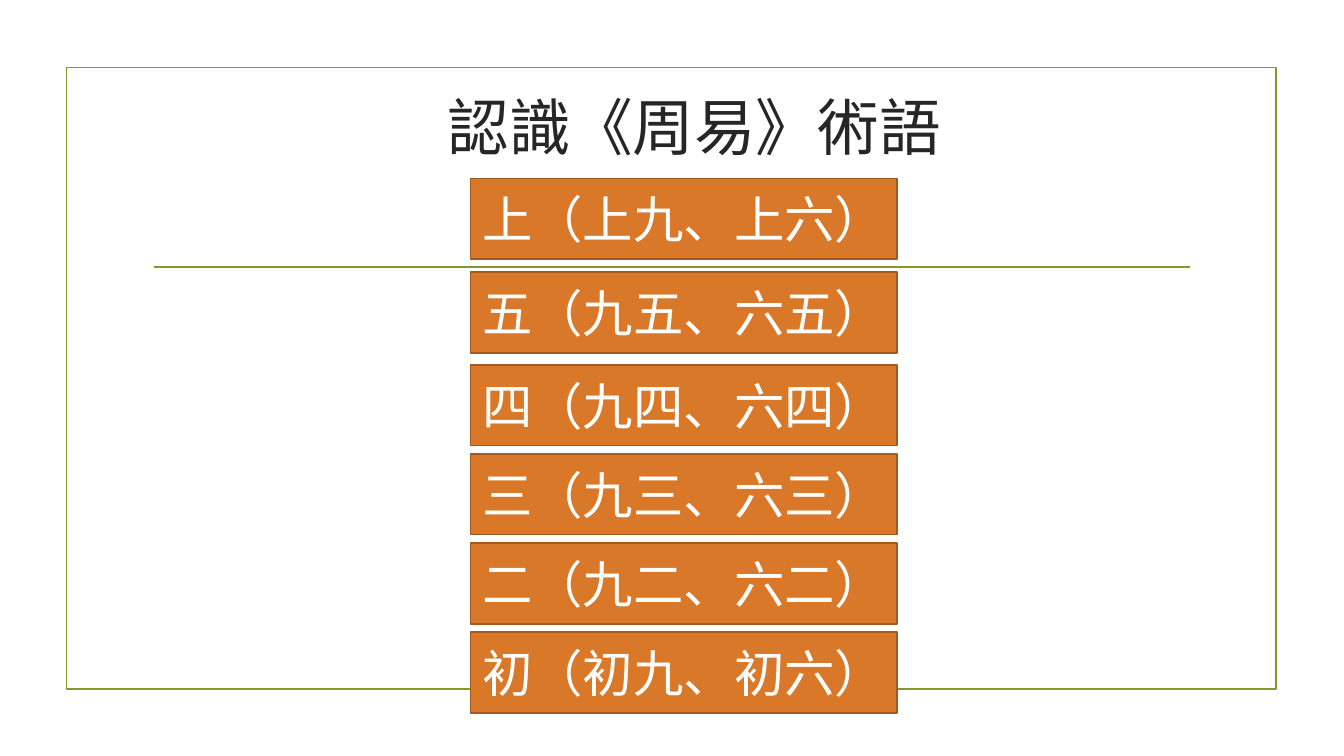
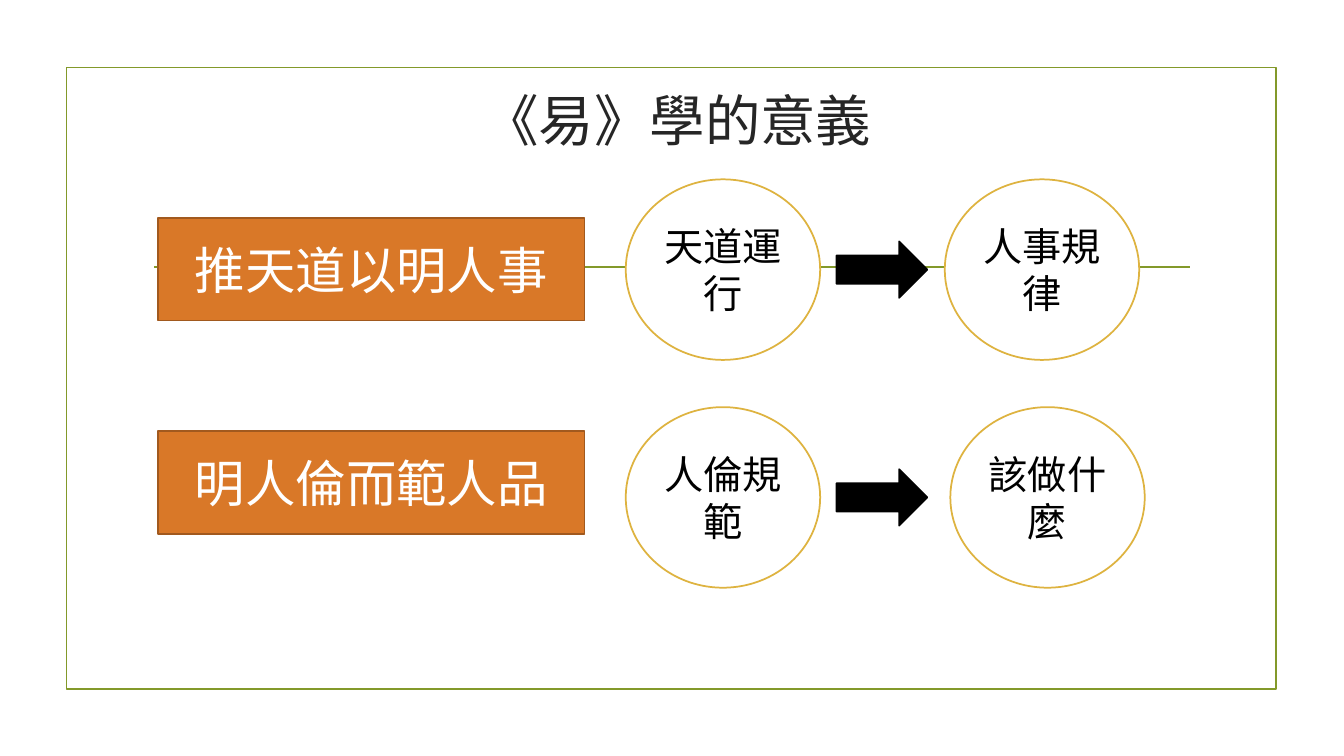
from dataclasses import dataclass
from typing import NamedTuple

from lxml.etree import SubElement
from pptx import Presentation
from pptx.dml.color import RGBColor as Rgb
from pptx.enum.shapes import MSO_CONNECTOR as Link, MSO_SHAPE as Kind
from pptx.enum.text import MSO_ANCHOR as Anchor, PP_ALIGN as Align
from pptx.oxml.ns import qn
from pptx.slide import Slide
from pptx.text.text import TextFrame
from pptx.util import Cm, Pt

FONT = "Noto Sans CJK SC"
GREEN = Rgb(0x83, 0x99, 0x2A)
INK = Rgb(0x26, 0x26, 0x26)
ORANGE = Rgb(0xD9, 0x78, 0x28)
BROWN = Rgb(0xA1, 0x59, 0x1E)
GOLD = Rgb(0xDE, 0xB3, 0x40)
WHITE = Rgb(0xFF, 0xFF, 0xFF)
BLACK = Rgb(0, 0, 0)
EDGE = Pt(1.25)


@dataclass(frozen=True)
class Style:
    kind: Kind
    fill: Rgb | None
    line: Rgb
    ink: Rgb = BLACK
    size: float = 28


class Area(NamedTuple):
    left: float
    top: float
    width: float
    height: float


class Row(NamedTuple):
    bar: str
    bar_top: float
    cause: str
    effect: str
    left: float
    top: float


FRAME = Style(Kind.RECTANGLE, None, GREEN)
BAR = Style(Kind.RECTANGLE, ORANGE, BROWN, WHITE, 36)
OVAL = Style(Kind.OVAL, WHITE, GOLD)
ARROW = Style(Kind.RIGHT_ARROW, BLACK, BLACK)

BAR_W = 10.74
OVAL_W, OVAL_H = 4.9, 4.55
ARROW_W, ARROW_H = 2.29, 1.42

YAO = [
    ("上（上九、上六）", 4.5),
    ("五（九五、六五）", 6.86),
    ("四（九四、六四）", 9.2),
    ("三（九三、六三）", 11.44),
    ("二（九二、六二）", 13.69),
    ("初（初九、初六）", 15.93),
]
ROWS = [
    Row("推天道以明人事", 5.49, "天道運行", "人事規律", 23.81, 4.52),
    Row("明人倫而範人品", 10.87, "人倫規範", "該做什麼", 23.95, 10.26),
]


def write(frame: TextFrame, text: str, size: float, ink: Rgb) -> None:
    frame.word_wrap = True
    frame.vertical_anchor = Anchor.MIDDLE
    para = frame.paragraphs[0]
    para.text = text
    para.alignment = Align.CENTER
    font = para.font
    font.name, font.size = FONT, Pt(size)
    font.color.rgb = ink
    props = para._p.pPr.find(qn("a:defRPr"))
    SubElement(props, qn("a:ea")).set("typeface", FONT)


def draw(slide: Slide, style: Style, area: Area, text: str = "") -> None:
    shape = slide.shapes.add_shape(style.kind, *map(Cm, area))
    shape.shadow.inherit = False
    if style.fill is None:
        shape.fill.background()
    else:
        shape.fill.solid()
        shape.fill.fore_color.rgb = style.fill
    shape.line.color.rgb = style.line
    shape.line.width = EDGE
    if text:
        write(shape.text_frame, text, style.size, style.ink)


def start(deck: Presentation, title: str, area: Area, size: float) -> Slide:
    slide = deck.slides.add_slide(deck.slide_layouts[6])
    draw(slide, FRAME, Area(1.68, 1.7, 30.48, 15.67))
    rule = slide.shapes.add_connector(
        Link.STRAIGHT, Cm(3.89), Cm(6.73), Cm(30), Cm(6.73))
    rule.line.color.rgb = GREEN
    rule.line.width = EDGE
    SubElement(rule._element.spPr, qn("a:effectLst"))
    box = slide.shapes.add_textbox(*map(Cm, area))
    write(box.text_frame, title, size, INK)
    return slide


def terms(deck: Presentation) -> None:
    slide = start(deck, "認識《周易》術語", Area(1.68, 1.83, 31.65, 2.67), 44)
    for text, top in YAO:
        draw(slide, BAR, Area(11.86, top, BAR_W, 2.03), text)


def sense(deck: Presentation) -> None:
    slide = start(deck, "《易》學的意義", Area(2.11, 1.83, 29.92, 2.34), 39.6)
    for row in ROWS:
        draw(slide, BAR, Area(3.99, row.bar_top, BAR_W, 2.59), row.bar)
        draw(slide, OVAL, Area(15.77, row.top, OVAL_W, OVAL_H), row.cause)
        draw(slide, OVAL, Area(row.left, row.top, OVAL_W, OVAL_H), row.effect)
        mid = row.top + (OVAL_H - ARROW_H) / 2
        draw(slide, ARROW, Area(21.08, mid, ARROW_W, ARROW_H))


def main() -> None:
    deck = Presentation()
    deck.slide_width, deck.slide_height = Cm(33.87), Cm(19.05)
    terms(deck)
    sense(deck)
    deck.save("out.pptx")


if __name__ == "__main__":
    main()
